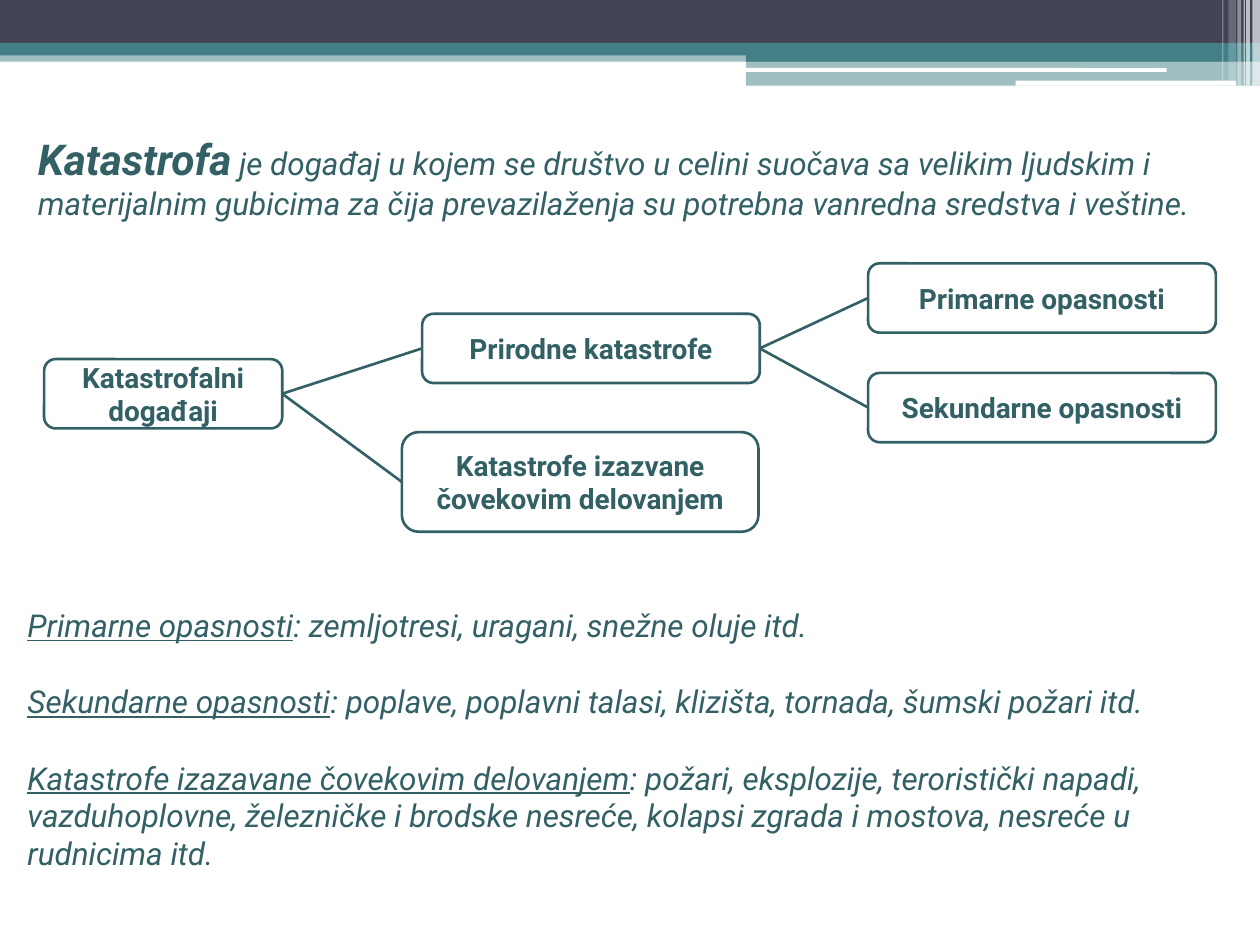
from dataclasses import dataclass

from lxml.etree import SubElement
from pptx import Presentation
from pptx.dml.color import RGBColor
from pptx.enum.shapes import MSO_CONNECTOR, MSO_SHAPE
from pptx.enum.text import MSO_ANCHOR, MSO_AUTO_SIZE, PP_ALIGN
from pptx.oxml.ns import qn
from pptx.util import Inches, Pt


@dataclass(frozen=True)
class Theme:
    font: str = "Roboto"
    text: str = "326065"
    teal: str = "438086"
    dark: str = "424456"
    white: str = "FFFFFF"
    term_size: float = 24.3
    body_size: float = 18
    box_size: float = 16
    line_width: float = 1.5


THEME = Theme()
TITLE_ONLY_LAYOUT = 5
LEFT_SIDE, RIGHT_SIDE = 1, 3

# left, top, width, height, colour, opacity in percent
BANDS = [
    (0, 0.4, 10, 0.09, THEME.teal, 50),
    (0, 0, 10, 0.34, THEME.dark, 100),
    (0, 0.34, 10, 0.1, THEME.teal, 100),
    (5.92, 0.39, 4.08, 0.1, THEME.teal, 100),
    (5.92, 0.48, 4.08, 0.2, THEME.teal, 50),
]
ROUNDED_BARS = [
    (5.91, 0.54, 3.35, 0.03, THEME.white, 100),
    (8.06, 0.64, 1.75, 0.04, THEME.white, 100),
]
# left, width, height, opacity in percent
STRIPES = [
    (9.94, 0.06, 0.68, 65),
    (9.89, 0.03, 0.68, 65),
    (9.87, 0.01, 0.68, 60),
    (9.82, 0.03, 0.68, 40),
    (9.75, 0.06, 0.64, 20),
    (9.7, 0.01, 0.64, 30),
]

# name: text, left, top, width, height
BOXES = {
    "secondary": ("Sekundarne opasnosti", 6.89, 2.96, 2.76, 0.55),
    "natural": ("Prirodne katastrofe", 3.35, 2.49, 2.68, 0.55),
    "human": ("Katastrofe izazvane\nčovekovim delovanjem", 3.19, 3.43, 2.83, 0.79),
    "primary": ("Primarne opasnosti", 6.89, 2.09, 2.76, 0.55),
    "events": ("Katastrofalni\ndogađaji", 0.35, 2.85, 1.89, 0.55),
}
BRANCHES = [
    ("events", "natural"),
    ("events", "human"),
    ("natural", "primary"),
    ("natural", "secondary"),
]

DEFINITION = (
    "Katastrofa",
    " je događaj u kojem se društvo u celini suočava sa velikim ljudskim i "
    "materijalnim gubicima za čija prevazilaženja su potrebna vanredna "
    "sredstva i veštine.",
)
EXAMPLES = [
    ("Primarne opasnosti", ": zemljotresi, uragani, snežne oluje itd."),
    ("Sekundarne opasnosti",
     ": poplave, poplavni talasi, klizišta, tornada, šumski požari itd."),
    ("Katastrofe izazavane čovekovim delovanjem",
     ": požari, eksplozije, teroristički napadi, vazduhoplovne, železničke i "
     "brodske nesreće, kolapsi zgrada i mostova, nesreće u rudnicima itd."),
]


def set_attributes(target, **values):
    for name, value in values.items():
        setattr(target, name, value)


def add_run(paragraph, text, size, **font_format):
    run = paragraph.add_run()
    run.text = text
    set_attributes(run.font, name=THEME.font, size=Pt(size), **font_format)
    run.font.color.rgb = RGBColor.from_string(THEME.text)


def add_bar(slide, preset, left, top, width, height, color, opacity):
    shape = slide.shapes.add_shape(
        preset, Inches(left), Inches(top), Inches(width), Inches(height))
    shape.shadow.inherit = False
    shape.line.fill.background()
    shape.fill.solid()
    shape.fill.fore_color.rgb = RGBColor.from_string(color)
    if opacity < 100:
        color_element = shape.fill._xPr.find(qn("a:solidFill"))[0]
        SubElement(color_element, qn("a:alpha"), val=str(opacity * 1000))


def add_header(slide):
    for band in BANDS:
        add_bar(slide, MSO_SHAPE.RECTANGLE, *band)
    for bar in ROUNDED_BARS:
        add_bar(slide, MSO_SHAPE.ROUNDED_RECTANGLE, *bar)
    for left, width, height, opacity in STRIPES:
        add_bar(slide, MSO_SHAPE.RECTANGLE, left, 0, width, height,
                THEME.white, opacity)


def format_title(slide):
    title = slide.shapes.title
    set_attributes(title, left=Inches(0.2), top=Inches(0.68),
                   width=Inches(9.53), height=Inches(1.1))
    set_attributes(title.text_frame, auto_size=MSO_AUTO_SIZE.NONE, word_wrap=True,
                   vertical_anchor=MSO_ANCHOR.BOTTOM, margin_bottom=Inches(0.02))
    paragraph = title.text_frame.paragraphs[0]
    paragraph.alignment = PP_ALIGN.LEFT
    term, explanation = DEFINITION
    add_run(paragraph, term, THEME.term_size, bold=True, italic=True)
    add_run(paragraph, explanation, THEME.body_size, bold=False, italic=True)


def style_line(line):
    line.color.rgb = RGBColor.from_string(THEME.text)
    line.width = Pt(THEME.line_width)


def add_box(slide, text, left, top, width, height):
    box = slide.shapes.add_shape(
        MSO_SHAPE.ROUNDED_RECTANGLE,
        Inches(left), Inches(top), Inches(width), Inches(height))
    box.shadow.inherit = False
    box.fill.background()
    style_line(box.line)
    frame = box.text_frame
    set_attributes(frame, word_wrap=True, vertical_anchor=MSO_ANCHOR.MIDDLE)
    for index, line_text in enumerate(text.split("\n")):
        paragraph = frame.add_paragraph() if index else frame.paragraphs[0]
        paragraph.alignment = PP_ALIGN.CENTER
        add_run(paragraph, line_text, THEME.box_size, bold=True)
    return box


def add_branch(slide, parent, child):
    connector = slide.shapes.add_connector(MSO_CONNECTOR.STRAIGHT, 0, 0, 0, 0)
    connector.begin_connect(parent, RIGHT_SIDE)
    connector.end_connect(child, LEFT_SIDE)
    style_line(connector.line)
    SubElement(connector._element.spPr, qn("a:effectLst"))


def add_examples(slide):
    text_box = slide.shapes.add_textbox(
        Inches(0.12), Inches(4.76), Inches(9.8), Inches(2.22))
    frame = text_box.text_frame
    frame.word_wrap = True
    for index, (term, examples) in enumerate(EXAMPLES):
        paragraph = frame.add_paragraph() if index else frame.paragraphs[0]
        if index:
            paragraph.space_before = Pt(22)
        add_run(paragraph, term, THEME.body_size, italic=True, underline=True)
        add_run(paragraph, examples, THEME.body_size, italic=True)


def main():
    presentation = Presentation()
    set_attributes(presentation, slide_width=Inches(10), slide_height=Inches(7.5))
    slide = presentation.slides.add_slide(
        presentation.slide_layouts[TITLE_ONLY_LAYOUT])
    add_header(slide)
    format_title(slide)
    boxes = {name: add_box(slide, *box) for name, box in BOXES.items()}
    for parent, child in BRANCHES:
        add_branch(slide, boxes[parent], boxes[child])
    add_examples(slide)
    presentation.save("out.pptx")


if __name__ == "__main__":
    main()
